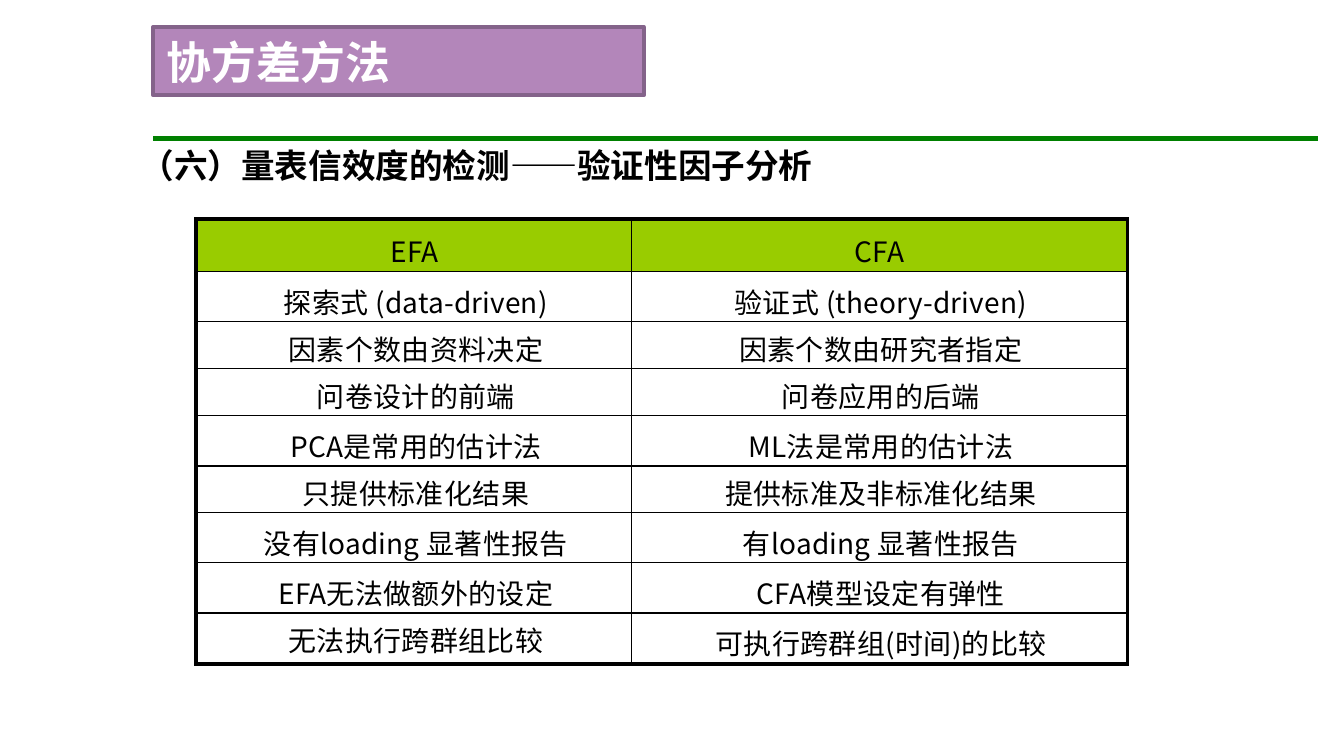
from pptx import Presentation
from pptx.dml.color import RGBColor
from pptx.enum import shapes, text
from pptx.oxml.ns import qn
from pptx.util import Inches, Pt
from lxml import etree

FONT = "Noto Sans CJK SC"
BLACK, WHITE, GREEN = "000000", "FFFFFF", "008000"
HEADER_GREEN, PURPLE, DARK_PURPLE = "99CC00", "B386BA", "84638A"
THIN, MEDIUM, THICK = 0.75, 1, 2.25

SLIDE_WIDTH = 10
SLIDE_HEIGHT = SLIDE_WIDTH * 9 / 16
COLUMN_WIDTHS = (3.24, 3.69)
ROW_HEIGHTS = (0.39, 0.37, 0.35, 0.35, 0.37, 0.35, 0.37, 0.37, 0.38)
# Each cell is a tuple of runs, split where the script changes
COMPARISON = [
    (("EFA",), ("CFA",)),
    (("探索式 ", "(data-driven)"), ("验证式 ", "(theory-driven)")),
    (("因素个数由资料决定",), ("因素个数由研究者指定",)),
    (("问卷设计的前端",), ("问卷应用的后端",)),
    (("PCA", "是常用的估计法"), ("ML", "法是常用的估计法")),
    (("只提供标准化结果",), ("提供标准及非标准化结果",)),
    (("没有", "loading ", "显著性报告"), ("有", "loading ", "显著性报告")),
    (("EFA", "无法做额外的设定"), ("CFA", "模型设定有弹性")),
    (("无法执行跨群组比较",), ("可执行跨群组", "(", "时间", ")", "的比较")),
]
# Widths of the horizontal rules, from the top edge to the bottom edge
RULES = (THICK, THIN, MEDIUM, THIN, THIN, MEDIUM, THIN, THIN, MEDIUM, THICK)


def color(hex_value):
    return RGBColor.from_string(hex_value)


def add_run(paragraph, words, size, font=FONT, ink=BLACK, bold=False):
    run = paragraph.add_run()
    run.text = words
    run.font.size = Pt(size)
    run.font.name = font
    run.font.bold = bold
    run.font.color.rgb = color(ink)
    # Chinese characters always use the sans font
    east_asian = etree.SubElement(run.font._element, qn("a:ea"))
    east_asian.set("typeface", FONT)
    return run


def add_title(slide, words):
    banner = slide.shapes.add_shape(
        shapes.MSO_SHAPE.RECTANGLE,
        Inches(1.14), Inches(0.2), Inches(3.65), Inches(0.51))
    banner.shadow.inherit = False
    banner.fill.solid()
    banner.fill.fore_color.rgb = color(PURPLE)
    banner.line.color.rgb = color(DARK_PURPLE)
    banner.line.width = Pt(2)
    banner.text_frame.vertical_anchor = text.MSO_ANCHOR.MIDDLE
    paragraph = banner.text_frame.paragraphs[0]
    paragraph.alignment = text.PP_ALIGN.LEFT
    add_run(paragraph, words, 24, "Times New Roman", WHITE, bold=True)


def add_divider(slide):
    divider = slide.shapes.add_connector(
        shapes.MSO_CONNECTOR.STRAIGHT,
        Inches(1.14), Inches(1.03), Inches(9.81), Inches(1.03))
    divider.line.color.rgb = color(GREEN)
    divider.line.width = Pt(2.25)
    etree.SubElement(divider._element.spPr, qn("a:effectLst"))


def add_heading(slide, words):
    heading = slide.shapes.add_textbox(
        Inches(0.75), Inches(1.03), Inches(5.59), Inches(0.4))
    frame = heading.text_frame
    frame.word_wrap = True
    frame.auto_size = text.MSO_AUTO_SIZE.SHAPE_TO_FIT_TEXT
    frame.paragraphs[0].alignment = text.PP_ALIGN.CENTER
    add_run(frame.paragraphs[0], words, 18, bold=True)


def set_borders(cell, left, right, top, bottom):
    properties = cell._tc.get_or_add_tcPr()
    for side, width in zip("LRTB", (left, right, top, bottom)):
        border = etree.SubElement(properties, qn(f"a:ln{side}"), w=str(Pt(width)))
        fill = etree.SubElement(border, qn("a:solidFill"))
        etree.SubElement(fill, qn("a:srgbClr"), val=BLACK)


def fill_cell(cell, runs, line_spacing, indent):
    cell.margin_left = cell.margin_right = cell.margin_top = cell.margin_bottom = 0
    paragraph = cell.text_frame.paragraphs[0]
    paragraph.alignment = text.PP_ALIGN.CENTER
    paragraph.line_spacing = Pt(line_spacing)
    paragraph._p.get_or_add_pPr().set("marL", str(Inches(indent)))
    for words in runs:
        run = add_run(paragraph, words, 15)
        # Chinese runs are tracked slightly wider than Latin ones
        run.font._element.set("spc", "10" if words.isascii() else "20")


def add_comparison(slide):
    table = slide.shapes.add_table(
        len(COMPARISON), len(COLUMN_WIDTHS), Inches(1.46), Inches(1.63),
        Inches(sum(COLUMN_WIDTHS)), Inches(sum(ROW_HEIGHTS))).table
    table.first_row = table.horz_banding = False
    for column, width in zip(table.columns, COLUMN_WIDTHS):
        column.width = Inches(width)
    for r, (row_height, methods) in enumerate(zip(ROW_HEIGHTS, COMPARISON)):
        table.rows[r].height = Inches(row_height)
        for c, runs in enumerate(methods):
            cell = table.cell(r, c)
            left, right = ((THICK, THIN), (THIN, THICK))[c]
            set_borders(cell, left, right, RULES[r], RULES[r + 1])
            if r == 0:
                cell.fill.solid()
                cell.fill.fore_color.rgb = color(HEADER_GREEN)
                fill_cell(cell, runs, 27.5, (0.01, 0)[c])
            else:
                cell.fill.background()
                has_latin = any(words.isascii() for words in runs)
                fill_cell(cell, runs, 26.8 if has_latin else 25.2, (0.03, 0.02)[c])


def main():
    deck = Presentation()
    deck.slide_width, deck.slide_height = Inches(SLIDE_WIDTH), Inches(SLIDE_HEIGHT)
    slide = deck.slides.add_slide(deck.slide_layouts[6])
    # Comparison of the two kinds of factor analysis
    add_comparison(slide)
    # Title area
    add_divider(slide)
    add_title(slide, "协方差方法")
    add_heading(slide, "（六）量表信效度的检测——验证性因子分析")
    deck.save("out.pptx")


if __name__ == "__main__":
    main()
